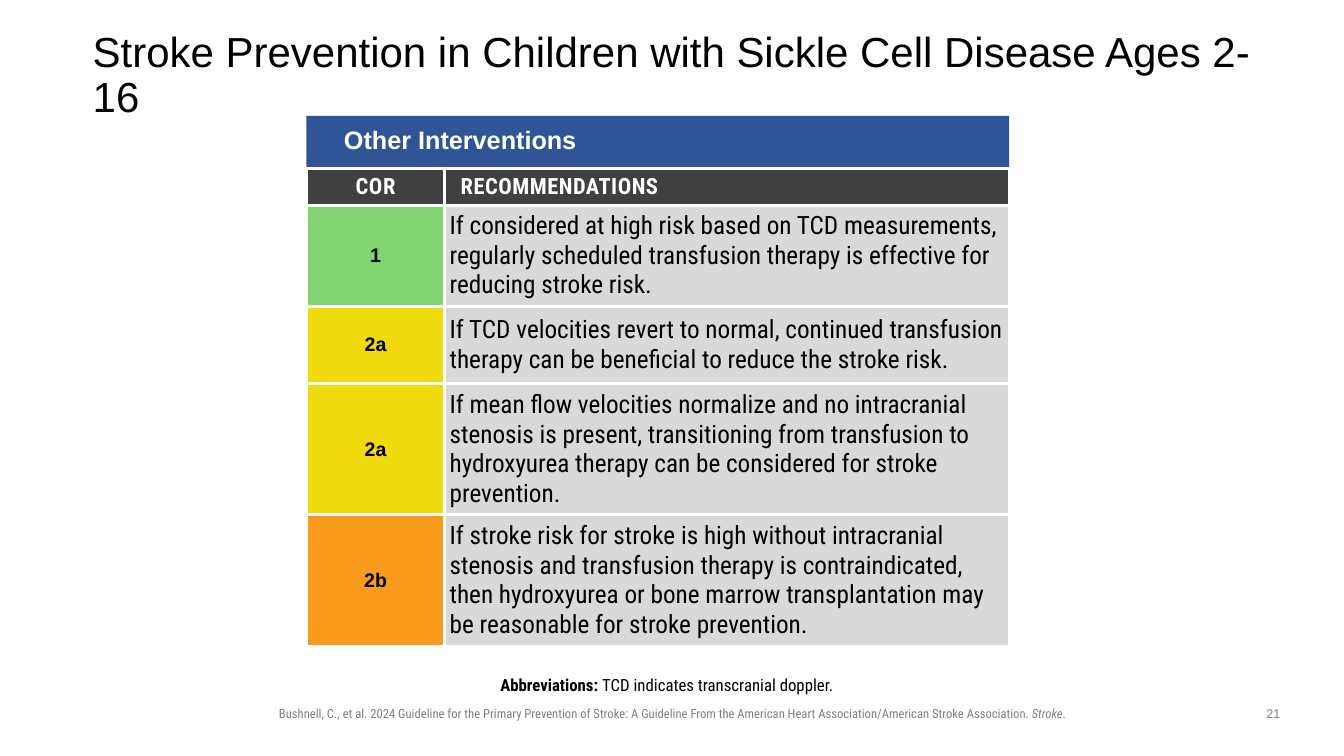
import lxml.etree
import pptx
import pptx.dml.color
import pptx.enum.shapes
import pptx.enum.text
import pptx.oxml.ns
import pptx.util

EMU_PER_PX = 9144
CONDENSED = "Roboto Condensed"
ALIGN = pptx.enum.text.PP_ALIGN
ANCHOR = pptx.enum.text.MSO_ANCHOR
COLUMN_WIDTHS = (137, 560)
HEADER_HEIGHT = 36
RECOMMENDATIONS = (
    ("1", "82D472", 77,
     "If considered at high risk based on TCD measurements, regularly scheduled "
     "transfusion therapy is effective for reducing stroke risk."),
    ("2a", "F0DB0E", 77,
     "If TCD velocities revert to normal, continued transfusion therapy can be "
     "beneficial to reduce the stroke risk."),
    ("2a", "F0DB0E", 98,
     "If mean flow velocities normalize and no intracranial stenosis is present, "
     "transitioning from transfusion to hydroxyurea therapy can be considered for "
     "stroke prevention."),
    ("2b", "F99B1D", 98,
     "If stroke risk for stroke is high without intracranial stenosis and transfusion "
     "therapy is contraindicated, then hydroxyurea or bone marrow transplantation may "
     "be reasonable for stroke prevention."),
)


def px(length):
    """Turn a length in px into EMU."""
    return pptx.util.Emu(length * EMU_PER_PX)


def rgb(code):
    """Turn a hex string into a colour."""
    return pptx.dml.color.RGBColor.from_string(code)


def apply(target, formats):
    """Set each attribute of the target named in a dict."""
    for name, value in formats.items():
        setattr(target, name, value)


def style(size, color="000000", name="Arial", **extra):
    """Describe the font of a run."""
    return {"size": pptx.util.Pt(size), "color": color, "name": name, **extra}


def write(paragraph, words, font):
    """Add a run of words in the given font and return it."""
    run = paragraph.add_run()
    run.text = words
    run.font.color.rgb = rgb(font["color"])
    apply(run.font, {key: value for key, value in font.items() if key != "color"})
    return run


def margins(left, top, right, bottom):
    """Describe the insets of a text frame or cell."""
    return {"margin_left": px(left), "margin_top": px(top),
            "margin_right": px(right), "margin_bottom": px(bottom)}


def add_text(slide, box, runs, insets=(10, 5, 10, 5), anchor=ANCHOR.TOP, **formats):
    """Place one paragraph of styled runs in a text box."""
    frame = slide.shapes.add_textbox(*map(px, box)).text_frame
    apply(frame, {"word_wrap": True, "vertical_anchor": anchor, **margins(*insets)})
    paragraph = frame.paragraphs[0]
    apply(paragraph, formats)
    for words, font in runs:
        write(paragraph, words, font)


def add_band(slide, box, color):
    """Draw a plain filled rectangle."""
    band = slide.shapes.add_shape(pptx.enum.shapes.MSO_SHAPE.RECTANGLE, *map(px, box))
    band.shadow.inherit = False
    band.fill.solid()
    band.fill.fore_color.rgb = rgb(color)
    band.line.fill.background()


def add_borders(cell, color, points):
    """Give a cell the same line on all four sides."""
    properties = cell._tc.get_or_add_tcPr()
    qn = pptx.oxml.ns.qn
    for index, side in enumerate(("lnL", "lnR", "lnT", "lnB")):
        line = lxml.etree.Element(qn(f"a:{side}"), w=str(pptx.util.Pt(points)))
        fill = lxml.etree.SubElement(line, qn("a:solidFill"))
        lxml.etree.SubElement(fill, qn("a:srgbClr"), val=color)
        properties.insert(index, line)


def fill_cell(cell, words, color, font, align, insets=(5, 5, 5, 5)):
    """Write and format one table cell, returning its run."""
    apply(cell, {"vertical_anchor": ANCHOR.MIDDLE, **margins(*insets)})
    cell.fill.solid()
    cell.fill.fore_color.rgb = rgb(color)
    add_borders(cell, "FFFFFF", 2.25)
    paragraph = cell.text_frame.paragraphs[0]
    paragraph.alignment = align
    return write(paragraph, words, font)


def add_recommendations(slide, left, top):
    """Build the table of recommendations by class."""
    heights = [HEADER_HEIGHT] + [row[2] for row in RECOMMENDATIONS]
    table = slide.shapes.add_table(
        len(heights), len(COLUMN_WIDTHS), px(left), px(top),
        px(sum(COLUMN_WIDTHS)), px(sum(heights))).table
    table.horz_banding = False
    for column, width in zip(table.columns, COLUMN_WIDTHS):
        column.width = px(width)
    for row, height in zip(table.rows, heights):
        row.height = px(height)

    heading = style(16, "FFFFFF", CONDENSED, bold=True)
    headings = (("COR", ALIGN.CENTER, 10, "50"), ("RECOMMENDATIONS", ALIGN.LEFT, 16, "40"))
    for column, (words, align, inset, spacing) in enumerate(headings):
        run = fill_cell(table.cell(0, column), words, "404040", heading, align,
                        (inset, 5, 10, 5))
        run.font._element.set("spc", spacing)

    for row, (grade, color, _, advice) in enumerate(RECOMMENDATIONS, 1):
        fill_cell(table.cell(row, 0), grade, color, style(14, bold=True), ALIGN.CENTER)
        fill_cell(table.cell(row, 1), advice, "D9D9D9",
                  style(18, name=CONDENSED, bold=False), ALIGN.LEFT)


def main():
    """Build the slide and save it."""
    deck = pptx.Presentation()
    apply(deck, {"slide_width": px(1333), "slide_height": px(750)})
    slide = deck.slides.add_slide(deck.slide_layouts[6])
    citation = style(9, "808080", CONDENSED)
    add_text(slide, (236, 695, 862, 25), [
        ("Bushnell, C., et al. 2024 Guideline for the Primary Prevention of Stroke: "
         "A Guideline From the American Heart Association/American Stroke Association. ",
         citation),
        ("Stroke", {**citation, "italic": True}),
        (".", citation)], alignment=ALIGN.CENTER)
    add_text(slide, (92, 40, 1150, 72),
             [("Stroke Prevention in Children with Sickle Cell Disease Ages 2-16", style(30))],
             (0, 0, 0, 0), ANCHOR.MIDDLE, line_spacing=0.9)
    add_band(slide, (304, 115, 697, 51), "2F5597")
    add_text(slide, (233, 119, 447, 42),
             [("Other Interventions", style(18, "FFFFFF", bold=True))],
             (0, 0, 0, 0), ANCHOR.MIDDLE, alignment=ALIGN.CENTER, line_spacing=0.9)
    add_recommendations(slide, 304, 167)
    note = style(12, name=CONDENSED)
    add_text(slide, (188, 649, 957, 46),
             [("Abbreviations: ", {**note, "bold": True}),
              ("TCD indicates transcranial doppler.", note)],
             (0, 5, 10, 5), ANCHOR.BOTTOM, alignment=ALIGN.CENTER, line_spacing=0.9)
    add_text(slide, (1242, 695, 42, 26), [("21", style(9, "808080"))],
             alignment=ALIGN.CENTER)
    deck.save("out.pptx")


if __name__ == "__main__":
    main()
